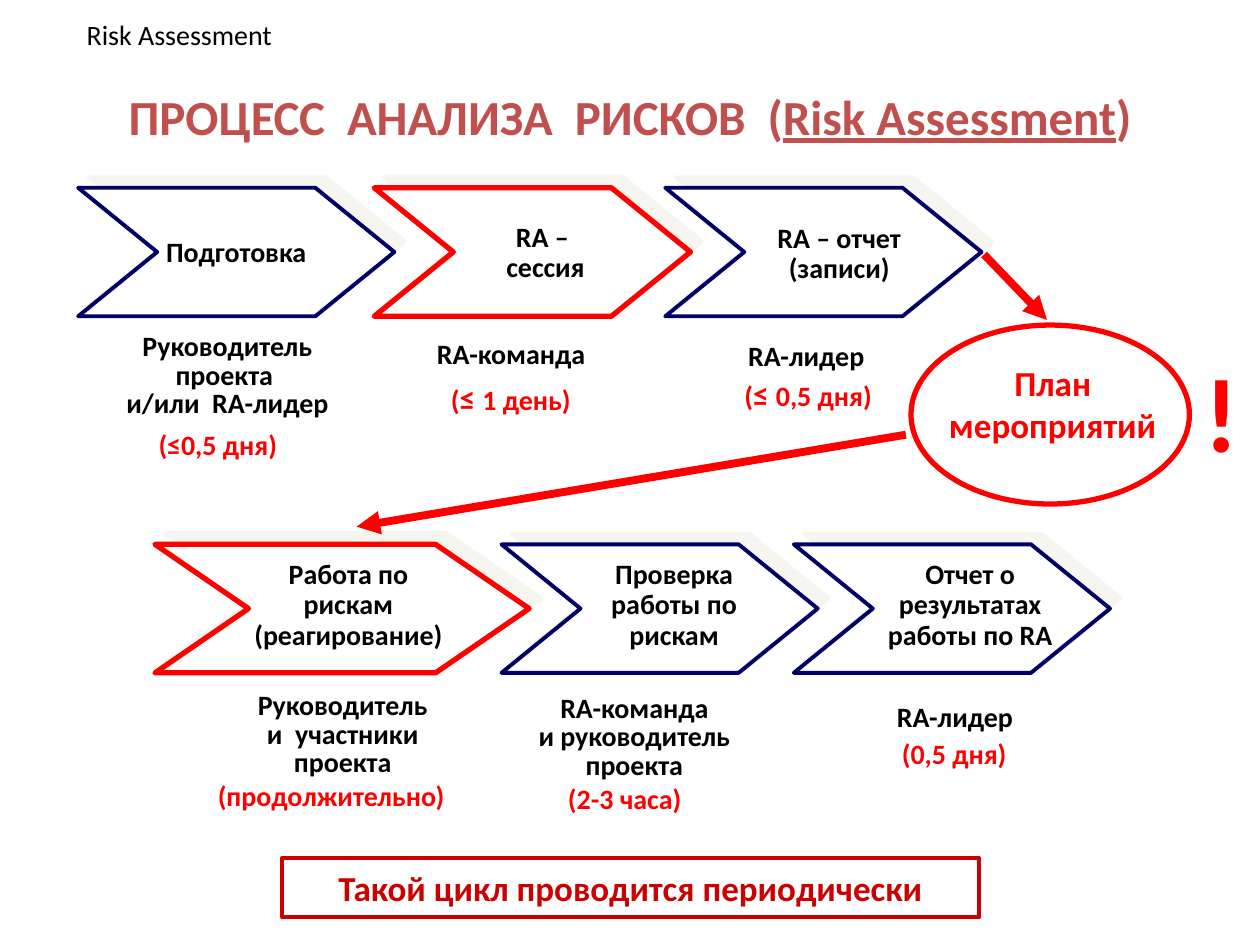
from lxml import etree
from pptx import Presentation
from pptx import util as u
from pptx.dml.color import RGBColor
from pptx.enum import shapes, text
from pptx.oxml.ns import qn

HUE = {"ink": "000000", "navy": "000066", "red": "FF0000", "dark": "CC0000",
       "title": "C0504D", "white": "FFFFFF", "shade": "EEECE1"}
COLS, ROWS = 100, 75
CELL = u.Inches(0.1)
LEFT, MID = text.PP_ALIGN.LEFT, text.PP_ALIGN.CENTER
KIND = shapes.MSO_SHAPE

STEPS = [
    ((12.3, 43.2, 29.7, 10.2), "red",
     (5.9, 0.8, 18.9, "Работа по\nрискам\n(реагирование)"),
     (6, 11.3, 17.8, "Руководитель\nи  участники\nпроекта"),
     (4, 18.1, 22.5, "(продолжительно)")),
    ((39.8, 43.2, 25.1, 10.2), "navy",
     (6.9, 0.8, 13.6, "Проверка\nработы по\nрискам"),
     (0.7, 11.5, 19.7, "RA-команда\nи руководитель\nпроекта"),
     (4.3, 18.3, 12.3, "(2-3 часа)")),
    ((63, 43.2, 25.1, 10.2), "navy",
     (5.3, 0.8, 17.4, "Отчет о\nрезультатах\nработы по RA"),
     (7.2, 11.8, 12.7, "RA-лидер"),
     (7.6, 14.8, 11.3, "(0,5 дня)")),
    ((29.7, 14.9, 25.1, 10.2), "red",
     (8.8, 2.3, 9.6, "RA – \nсессия"),
     (4, 11.3, 15.3, "RA-команда"),
     (5.1, 14.7, 12.8, [("(", {}), ("≤ ", {"size": 18}), ("1 день)", {})])),
    ((52.8, 14.9, 25.1, 10.2), "navy",
     (6.9, 2.4, 13.8, "RA – отчет\n(записи)"),
     (5.6, 11.5, 12.7, "RA-лидер"),
     (5.3, 14.4, 13.3, [("(", {}), ("≤ ", {"size": 18}), ("0,5 дня)", {})])),
    ((6.2, 14.9, 25.1, 10.2), "navy",
     (6, 3.2, 14.8, "Подготовка"),
     (1.8, 11.1, 20.1, "Руководитель\nпроекта \nи/или  RA-лидер"),
     (5.4, 18.5, 12.5, "(≤0,5 дня)")),
]


def grid(*vals):
    """Turn grid units into lengths."""
    return [u.Emu(round(val * CELL)) for val in vals]


def tint(name):
    """Return the named colour."""
    return RGBColor.from_string(HUE[name])


def fill(frame, words, size=16, color="ink", bold=True, align=None, gap=None):
    """Write text or a list of (text, changes) runs into a frame."""
    runs = [(words, {})] if isinstance(words, str) else words
    many = any("\n" in part for part, _ in runs)
    frame.word_wrap = False
    para = frame.paragraphs[0]
    para.alignment = align or (MID if many else LEFT)
    if gap and many:
        para.line_spacing = gap
    for part, new in runs:
        pts = new.get("size", size)
        for num, line in enumerate(part.split("\n")):
            if num:
                para.add_line_break()
                etree.SubElement(para._p[-1], qn("a:rPr"), sz=str(pts * 100))
            run = para.add_run()
            run.text = line
            font = run.font
            font.name, font.size, font.bold = "Calibri", u.Pt(pts), bold
            font.underline = new.get("line")
            font.color.rgb = tint(color)


def write(slide, x, y, w, words, size=16, gap=None, **form):
    """Add a text box whose height follows from its lines."""
    runs = [(words, {})] if isinstance(words, str) else words
    rows = 1 + sum(part.count("\n") for part, _ in runs)
    top = max(new.get("size", size) for _, new in runs)
    lead = gap if gap and rows > 1 else 1
    tall = 1 + rows * top * 1.22 * lead / 7.2
    frame = slide.shapes.add_textbox(*grid(x, y, w, tall)).text_frame
    frame.auto_size = text.MSO_AUTO_SIZE.SHAPE_TO_FIT_TEXT
    fill(frame, words, size=size, gap=gap, **form)


def draw(slide, kind, box, color, width, back=None):
    """Add an outlined shape."""
    shape = slide.shapes.add_shape(kind, *grid(*box))
    shape.shadow.inherit = False
    if back:
        shape.fill.solid()
        shape.fill.fore_color.rgb = tint(back)
    else:
        shape.fill.background()
    shape.line.color.rgb = tint(color)
    shape.line.width = u.Pt(width)
    return shape


def shade(shape):
    """Cast a pale shadow up and to the right."""
    fx = shape._element.spPr.find(qn("a:effectLst"))
    cast = etree.SubElement(fx, qn("a:outerShdw"), dist=str(u.Pt(8.5)),
                            dir=str(315 * 60000), algn="ctr", rotWithShape="0")
    hue = etree.SubElement(cast, qn("a:srgbClr"), val=HUE["shade"])
    etree.SubElement(hue, qn("a:alpha"), val="50000")


def step(slide, box, color, label, who, time):
    """Place one chevron with its label, owner and duration."""
    x, y, w, h = box
    shape = draw(slide, KIND.CHEVRON, box, color,
                 3 if color == "red" else 2.25, "white")
    shape.adjustments[0] = w / h / 4
    shade(shape)
    for part, hue, gap in ((label, "ink", 0.9), (who, "ink", 0.85),
                           (time, "red", None)):
        dx, dy, wide, words = part
        write(slide, x + dx, y + dy, wide, words, color=hue, gap=gap)


def arrow(slide, *ends):
    """Draw a thick red arrow between two points."""
    line = slide.shapes.add_connector(shapes.MSO_CONNECTOR.STRAIGHT, *grid(*ends))
    line.line.color.rgb = tint("red")
    line.line.width = u.Pt(4.5)
    etree.SubElement(line.line._get_or_add_ln(), qn("a:tailEnd"), type="triangle")
    etree.SubElement(line._element.spPr, qn("a:effectLst"))


def head(slide, x, y, w):
    """Place the running header and the title."""
    write(slide, x + 5.9, y + 0.9, 19, "Risk Assessment", bold=False)
    write(slide, x, y + 6.4, w,
          [("ПРОЦЕСС  АНАЛИЗА  РИСКОВ  (", {}),
           ("Risk Assessment", {"line": True}), (")", {})],
          size=28, color="title", align=MID)


def plan(slide, x, y, w, h):
    """Place the action plan oval, its mark and its arrows."""
    draw(slide, KIND.OVAL, (x, y, w, h), "red", 3)
    write(slide, x + 1, y + 2.4, 20.5, "План\nмероприятий", size=20, color="red")
    write(slide, x + 22.3, y + 1.3, 4.8, "!", size=60, color="red")
    arrow(slide, x + 5.8, y - 5.6, x + 10.8, y - 0.4)
    arrow(slide, x - 0.4, y + 8.7, x - 44, y + 16)


def foot(slide, *box):
    """Place the framed closing line."""
    shape = draw(slide, KIND.RECTANGLE, box, "dark", 2.25)
    fill(shape.text_frame, "Такой цикл проводится периодически",
         size=20, color="dark", align=MID)


def main():
    """Build and save the slide."""
    deck = Presentation()
    deck.slide_width, deck.slide_height = grid(COLS, ROWS)
    slide = deck.slides.add_slide(deck.slide_layouts[6])
    for item in STEPS:
        step(slide, *item)
    head(slide, 0, 0, COLS)
    plan(slide, 72.3, 25.8, 22.1, 14.2)
    foot(slide, 22.4, 68.1, 55.3, 4.7)
    deck.save("out.pptx")


if __name__ == "__main__":
    main()
